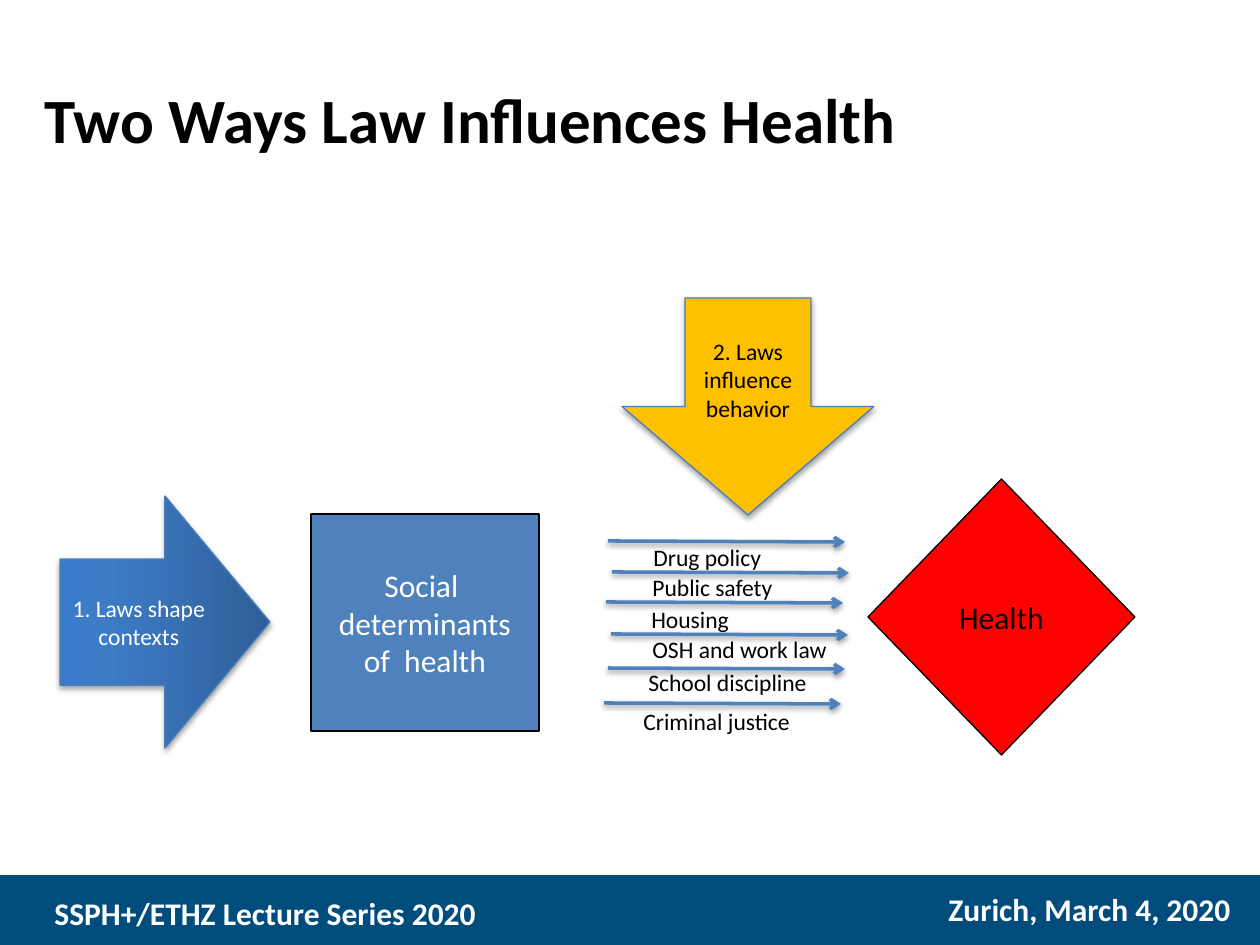
import lxml.etree
import pptx
import pptx.dml.color
import pptx.enum.shapes
import pptx.enum.text
import pptx.oxml.ns
import pptx.util

SCALE = 914400 / 126
FONT = "Calibri"
SHAPE = pptx.enum.shapes.MSO_SHAPE
ALIGN = pptx.enum.text.PP_ALIGN
ANCHOR = pptx.enum.text.MSO_ANCHOR

POLICIES = [
    ("Drug policy", (641, 537, 145), (608, 541)),
    ("Public safety", (640, 567, 160), (612, 572)),
    ("Housing", (639, 599, 113), (606, 602)),
    ("OSH and work law", (640, 629, 223), (611, 634)),
    ("School discipline", (636, 662, 203), (608, 668)),
    ("Criminal justice", (631, 701, 188), (604, 703)),
]


def px(value):
    return pptx.util.Emu(round(value * SCALE))


def color(code):
    return pptx.dml.color.RGBColor.from_string(code)


def add_element(parent, tag, **attributes):
    return lxml.etree.SubElement(parent, pptx.oxml.ns.qn(tag), attributes)


def add_color(parent, code):
    return add_element(parent, "a:srgbClr", val=code)


def write(box, text, size, ink, bold=False, align=ALIGN.LEFT, wrap=False, anchor=ANCHOR.TOP):
    frame = box.text_frame
    frame.text = text
    frame.word_wrap = wrap
    frame.auto_size = pptx.enum.text.MSO_AUTO_SIZE.NONE
    frame.vertical_anchor = anchor
    for para in frame.paragraphs:
        para.alignment = align
        para.font.name = FONT
        para.font.size = pptx.util.Pt(size)
        para.font.bold = bold
        para.font.color.rgb = color(ink)


def add_label(page, bounds, text, size, ink, bold=False):
    box = page.shapes.add_textbox(*map(px, bounds))
    write(box, text, size, ink, bold)


def add_block(page, kind, bounds, fill, line=None):
    block = page.shapes.add_shape(kind, *map(px, bounds))
    block.shadow.inherit = False
    block.fill.solid()
    block.fill.fore_color.rgb = color(fill)
    if line:
        block.line.color.rgb = color(line)
        block.line.width = pptx.util.Pt(0.75)
    else:
        block.line.fill.background()
    return block


def cast_shadow(shape, distance, opacity):
    properties = shape._element.spPr
    effects = properties.find(pptx.oxml.ns.qn("a:effectLst"))
    if effects is None:
        effects = add_element(properties, "a:effectLst")
    shadow = add_element(effects, "a:outerShdw", blurRad="40000", dist=str(distance),
                         dir="5400000", rotWithShape="0")
    add_element(add_color(shadow, "000000"), "a:alpha", val=str(opacity * 1000))


def add_law_arrow(page, bounds, text, fill, ink):
    arrow = add_block(page, SHAPE.DOWN_ARROW, bounds, fill, "4B7EBC")
    cast_shadow(arrow, 23000, 35)
    write(arrow, text, 13.5, ink, align=ALIGN.CENTER, wrap=True, anchor=ANCHOR.MIDDLE)
    return arrow


def turn_right(arrow):
    arrow.rotation = 270
    arrow.text_frame._txBody.bodyPr.set("vert", "vert")


def fill_gradient(shape, stops, angle):
    shape.fill.gradient()
    shape.fill.gradient_angle = angle
    stop_list = shape._element.spPr.find(pptx.oxml.ns.qn("a:gradFill")).gsLst
    for stop in list(stop_list):
        stop_list.remove(stop)
    for position, code in stops:
        add_color(add_element(stop_list, "a:gs", pos=str(position * 1000)), code)


def add_policy_arrow(page, left, top):
    arrow = page.shapes.add_connector(pptx.enum.shapes.MSO_CONNECTOR.STRAIGHT,
                                      px(left), px(top), px(left + 237), px(top + 1))
    arrow.line.color.rgb = color("4F81BD")
    arrow.line.width = pptx.util.Pt(2)
    add_element(arrow.line._get_or_add_ln(), "a:tailEnd", type="arrow")
    cast_shadow(arrow, 20000, 38)


def place_title(page, bounds, text):
    title = page.shapes.title
    title.left, title.top, title.width, title.height = map(px, bounds)
    write(title, text, 36, "000000", bold=True)


def main():
    deck = pptx.Presentation()
    deck.slide_width, deck.slide_height = px(1260), px(945)
    page = deck.slides.add_slide(deck.slide_layouts[5])
    place_title(page, (32, 74, 1016, 89), "Two Ways Law Influences Health")

    add_block(page, SHAPE.RECTANGLE, (0, 875, 1260, 70), "004C7D")
    add_label(page, (42, 888, 459, 50), "SSPH+/ETHZ Lecture Series 2020", 18, "FFFFFF", True)
    add_label(page, (936, 884, 310, 50), "Zurich, March 4, 2020", 18, "FFFFFF", True)

    determinants = add_block(page, SHAPE.RECTANGLE, (311, 514, 228, 217), "4F81BD", "000000")
    write(determinants, "Social \ndeterminants\nof  health", 18, "FFFFFF",
          align=ALIGN.CENTER, anchor=ANCHOR.MIDDLE)
    health = add_block(page, SHAPE.DIAMOND, (868, 479, 267, 276), "FF0000", "000000")
    write(health, "Health", 18, "000000", align=ALIGN.CENTER, anchor=ANCHOR.MIDDLE)

    contexts = add_law_arrow(page, (39, 517, 252, 210), "1. Laws shape contexts",
                             "3D7CC7", "FFFFFF")
    turn_right(contexts)
    fill_gradient(contexts, [(0, "2F5F99"), (80, "3D7CC7"), (100, "3A7CCB")], 90)
    add_law_arrow(page, (622, 298, 252, 217), "2. Laws influence behavior",
                  "FFC000", "000000")

    for text, (left, top, width), start in POLICIES:
        add_policy_arrow(page, *start)
        add_label(page, (left, top, width, 42), text, 13.5, "000000")

    deck.save("out.pptx")


if __name__ == "__main__":
    main()
